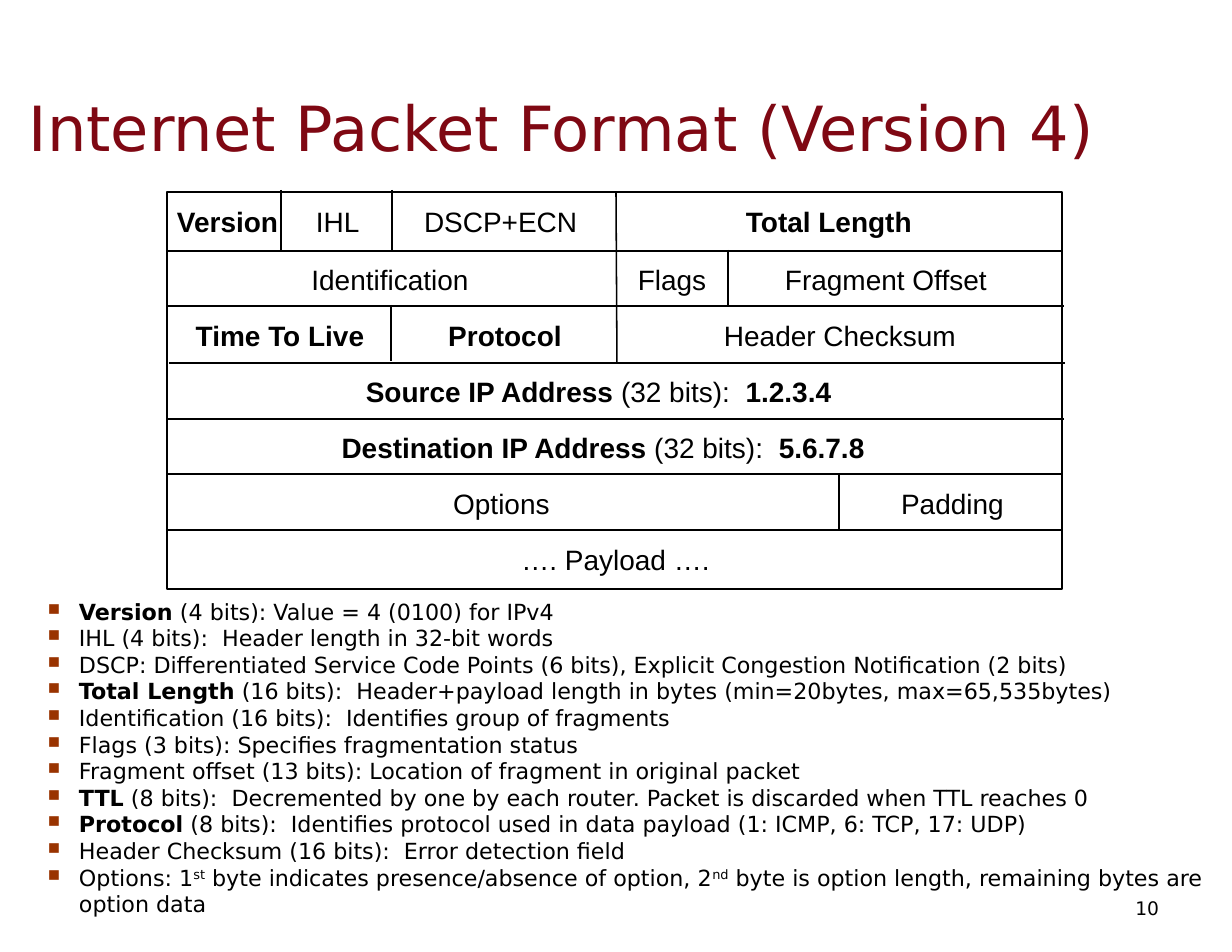
from lxml import etree
from pptx import Presentation
from pptx.dml.color import RGBColor
from pptx.enum.shapes import MSO_CONNECTOR, MSO_SHAPE
from pptx.enum.text import MSO_ANCHOR, PP_ALIGN
from pptx.oxml.ns import qn
from pptx.util import Emu, Pt

LEFT, MID, RIGHT = PP_ALIGN.LEFT, PP_ALIGN.CENTER, PP_ALIGN.RIGHT
TOP, MIDDLE = MSO_ANCHOR.TOP, MSO_ANCHOR.MIDDLE
STRAIGHT = MSO_CONNECTOR.STRAIGHT
BLACK = RGBColor(0x00, 0x00, 0x00)
MAROON = RGBColor(0x7F, 0x08, 0x13)
RUST = RGBColor(0x99, 0x33, 0x00)
SANS, ARIAL = "DejaVu Sans", "Arial"
BOLD, SUP = "bold", "sup"

TITLE = "Internet Packet Format (Version 4)"
NOTES = [
    [("Version", BOLD), " (4 bits): Value = 4 (0100) for IPv4"],
    ["IHL (4 bits):  Header length in 32-bit words"],
    ["DSCP: Differentiated Service Code Points (6 bits), "
     "Explicit Congestion Notification (2 bits)"],
    [("Total Length", BOLD),
     " (16 bits):  Header+payload length in bytes (min=20bytes, max=65,535bytes)"],
    ["Identification (16 bits):  Identifies group of fragments"],
    ["Flags (3 bits): Specifies fragmentation status"],
    ["Fragment offset (13 bits): Location of fragment in original packet"],
    [("TTL", BOLD),
     " (8 bits):  Decremented by one by each router. "
     "Packet is discarded when TTL reaches 0"],
    [("Protocol", BOLD),
     " (8 bits):  Identifies protocol used in data payload (1: ICMP, 6: TCP, 17: UDP)"],
    ["Header Checksum (16 bits):  Error detection field"],
    ["Options: 1", ("st", SUP), " byte indicates presence/absence of option, 2",
     ("nd", SUP), " byte is option length, remaining bytes are option data"],
]

# Packet rows: each field is (left, width, alignment, runs), in px
ROWS = [
    [(177, 112, LEFT, [("Version", BOLD)]), (316, 73, LEFT, ["IHL"]),
     (424, 157, LEFT, ["DSCP+ECN"]), (746, 203, LEFT, [("Total Length", BOLD)])],
    [(265, 250, MID, ["Identification"]), (617, 110, MID, ["Flags"]),
     (785, 203, LEFT, ["Fragment Offset"])],
    [(155, 250, MID, [("Time To Live", BOLD)]), (380, 250, MID, [("Protocol", BOLD)]),
     (724, 250, LEFT, ["Header Checksum"])],
    [(311, 575, MID, [("Source IP Address ", BOLD), "(32 bits):  ", ("1.2.3.4", BOLD)])],
    [(314, 578, MID, [("Destination IP Address", BOLD), " (32 bits):  ",
                      ("5.6.7.8", BOLD)])],
    [(351, 301, MID, ["Options"]), (802, 301, MID, ["Padding"])],
    [(465, 301, MID, ["…. Payload …."])],
]
FRAME = (167, 192, 895, 397)
EDGES = [193, 251, 306, 363, 419, 474, 530]  # top of each row
STARTS = [166, 168, 169, 168, 167, 166]      # left end of each row line
SPAN = 896
WALLS = [(281, 190, 281, 251), (392, 190, 392, 251), (616, 193, 617, 363),
         (728, 250, 728, 306), (391, 305, 391, 361), (839, 473, 839, 529)]


def px(n):
    return Emu(round(n * 914400 / 112))


def bullet(para):
    props = para._p.get_or_add_pPr()
    props.set("marL", str(px(47)))
    props.set("indent", str(px(-31)))
    color = etree.SubElement(props, qn("a:buClr"))
    etree.SubElement(color, qn("a:srgbClr")).set("val", str(RUST))
    etree.SubElement(props, qn("a:buSzPct")).set("val", "75000")
    etree.SubElement(props, qn("a:buChar")).set("char", "■")


def add_text(slide, box, paras, size, font=SANS, color=BLACK, align=LEFT,
             anchor=TOP, inset=(12, 7), marks=False, pitch=None):
    """Add a text box; each paragraph is a list of strings or (text, style)."""
    frame = slide.shapes.add_textbox(*map(px, box)).text_frame
    frame.word_wrap = True
    frame.vertical_anchor = anchor
    frame.margin_left = frame.margin_right = px(inset[0])
    frame.margin_top = frame.margin_bottom = px(inset[1])
    for i, runs in enumerate(paras):
        para = frame.paragraphs[0] if i == 0 else frame.add_paragraph()
        if marks:
            bullet(para)
        para.alignment = align
        if pitch:
            para.line_spacing = Pt(pitch)
        for item in runs:
            words, style = (item, None) if isinstance(item, str) else item
            run = para.add_run()
            run.text = words
            run.font.name, run.font.size = font, Pt(size)
            run.font.bold = style == BOLD
            run.font.color.rgb = color
            if style == SUP:
                run._r.get_or_add_rPr().set("baseline", "30000")


def add_line(slide, ends):
    line = slide.shapes.add_connector(STRAIGHT, *map(px, ends))
    line.line.color.rgb = BLACK
    line.line.width = Pt(1)
    etree.SubElement(line._element.spPr, qn("a:effectLst"))


def add_packet(slide):
    frame = slide.shapes.add_shape(MSO_SHAPE.RECTANGLE, *map(px, FRAME))
    frame.shadow.inherit = False
    frame.fill.background()
    frame.line.color.rgb = BLACK
    frame.line.width = Pt(1.5)
    for x, y in zip(STARTS, EDGES[1:]):
        add_line(slide, (x, y, x + SPAN, y))
    for wall in WALLS:
        add_line(slide, wall)
    for y, fields in zip(EDGES, ROWS):
        for x, width, align, runs in fields:
            add_text(slide, (x, y + 6, width, 45), [runs], 18, font=ARIAL,
                     align=align, inset=(0, 6))


def main():
    deck = Presentation()
    deck.slide_width, deck.slide_height = px(1232), px(952)
    slide = deck.slides.add_slide(deck.slide_layouts[6])
    add_text(slide, (20, 591, 1212, 346), NOTES, 14.3, marks=True, pitch=17.1)
    add_text(slide, (17, 69, 1179, 116), [[TITLE]], 40, color=MAROON, anchor=MIDDLE)
    add_text(slide, (883, 883, 288, 50), [["10"]], 12, align=RIGHT, anchor=MIDDLE)
    add_packet(slide)
    deck.save("out.pptx")


if __name__ == "__main__":
    main()
